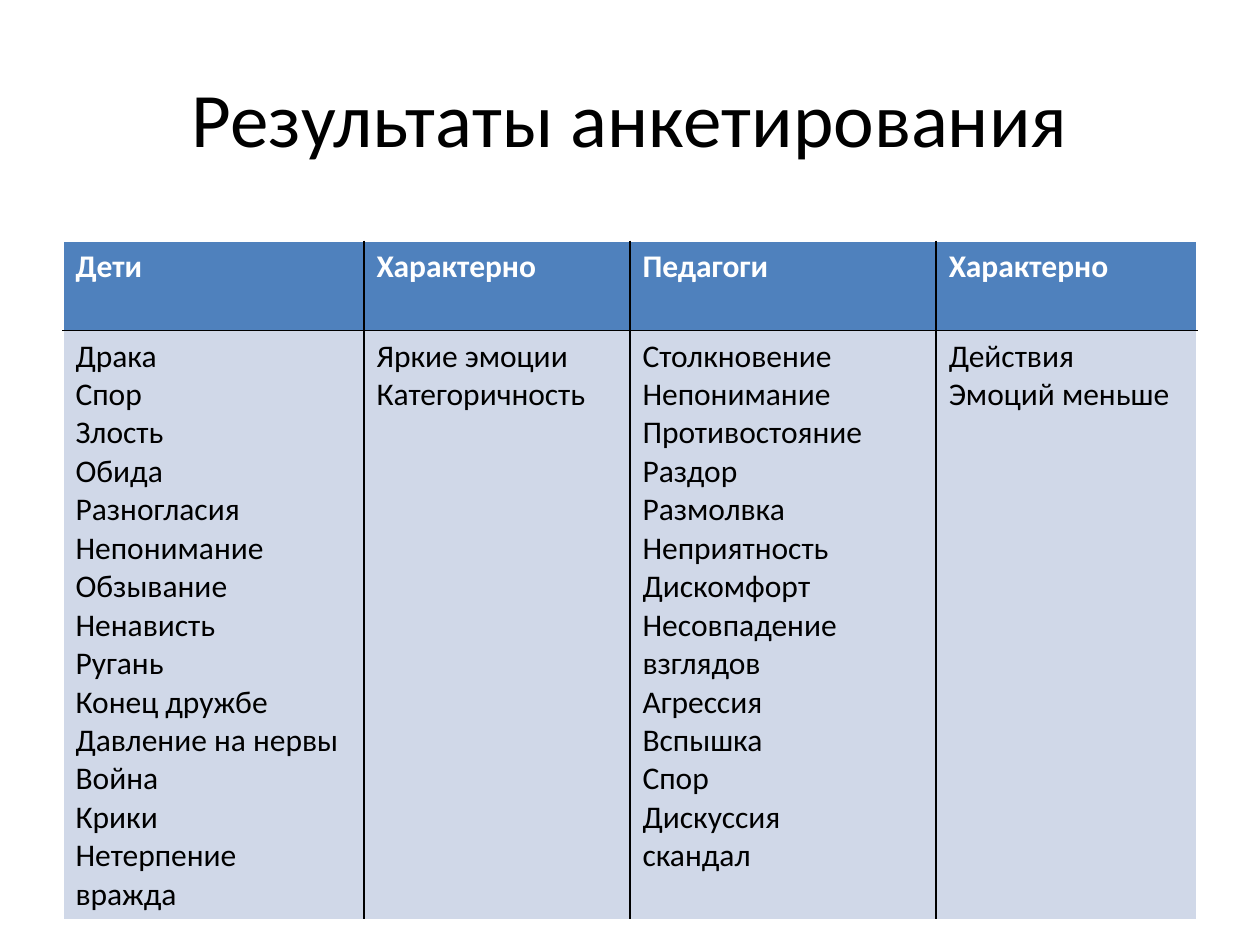
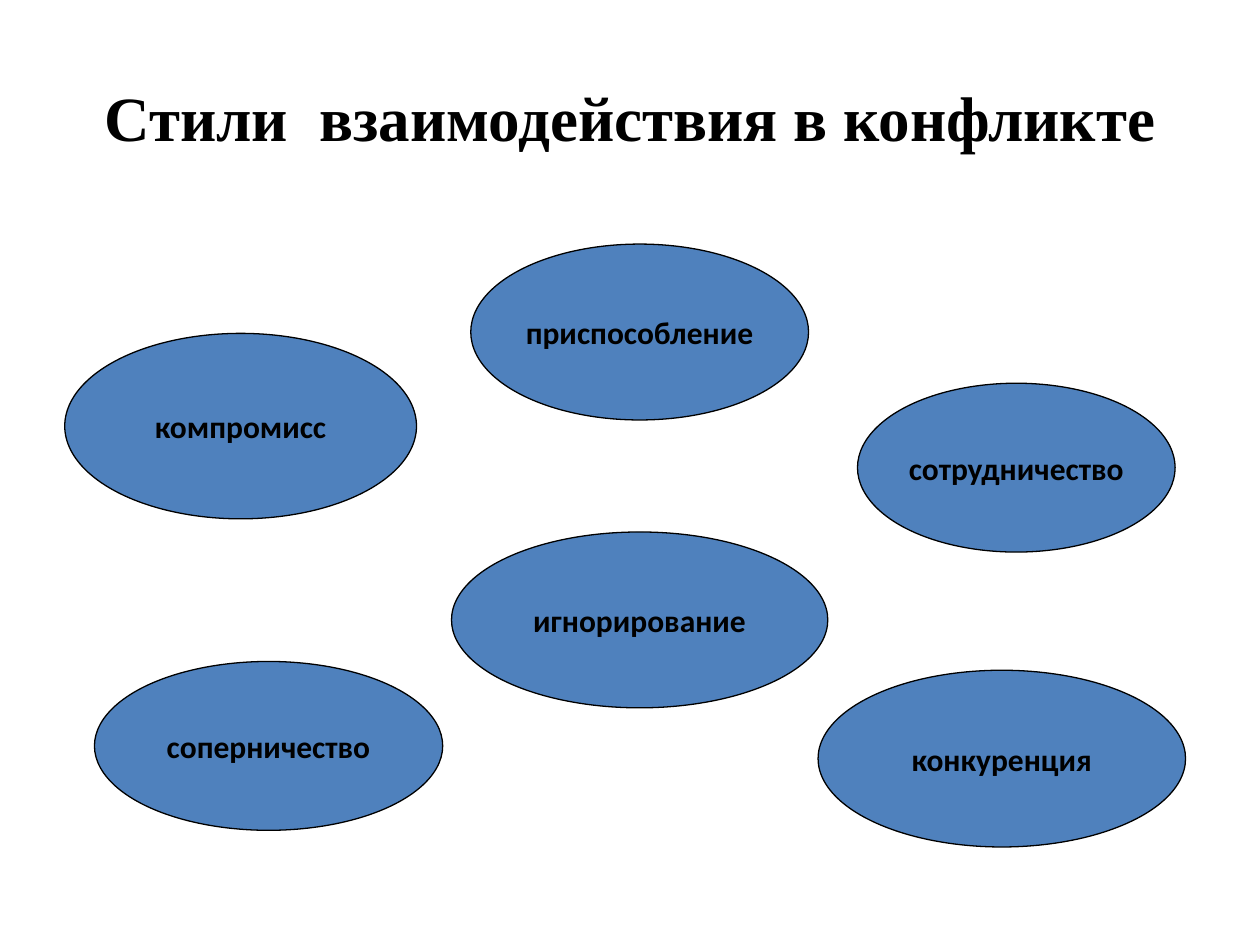
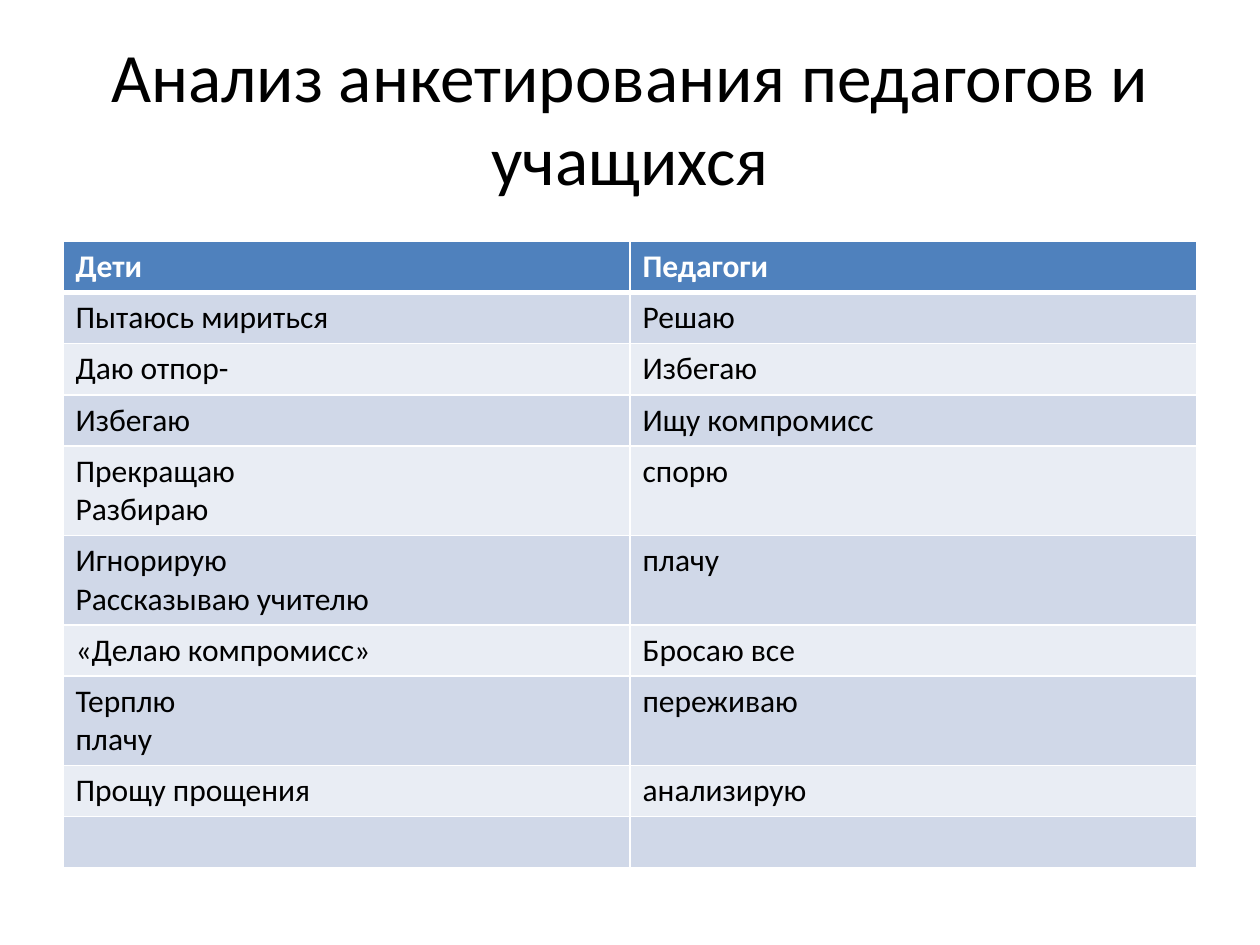
from lxml.etree import SubElement
from pptx import Presentation
from pptx.dml.color import RGBColor
from pptx.enum.shapes import MSO_SHAPE
from pptx.enum.text import MSO_ANCHOR, MSO_AUTO_SIZE, PP_ALIGN
from pptx.oxml.ns import qn
from pptx.util import Pt

COLORS = {"accent": "4F81BD", "band": "D0D8E8", "light": "E9EDF4",
          "white": "FFFFFF", "black": "000000"}
FONT = "Calibri"
TITLE_BOX = (36, 21.6, 648, 90)
TABLE_BOX = (36, 138, 648)  # left, top, width
ROW_HEIGHT = 29.2

SURVEY_HEADER = ["Дети", "Характерно", "Педагоги", "Характерно"]
SURVEY_WORDS = [
    ["Драка", "Спор", "Злость", "Обида", "Разногласия", "Непонимание",
     "Обзывание", "Ненависть", "Ругань", "Конец дружбе",
     "Давление на нервы", "Война", "Крики", "Нетерпение", "вражда"],
    ["Яркие эмоции", "Категоричность"],
    ["Столкновение", "Непонимание", "Противостояние", "Раздор",
     "Размолвка", "Неприятность", "Дискомфорт", "Несовпадение взглядов",
     "Агрессия", "Вспышка", "Спор", "Дискуссия", "скандал"],
    ["Действия", "Эмоций меньше"],
]
REACTIONS = [
    ("Дети", "Педагоги"),
    ("Пытаюсь мириться", "Решаю"),
    ("Даю отпор-", "Избегаю"),
    ("Избегаю", "Ищу компромисс"),
    ("Прекращаю\nРазбираю", "спорю"),
    ("Игнорирую\nРассказываю учителю", "плачу"),
    ("«Делаю компромисс»", "Бросаю все"),
    ("Терплю\nплачу", "переживаю"),
    ("Прощу прощения", "анализирую"),
    ("", ""),
]
# Offsets and sizes within the area below the title
STYLES_AREA = (36, 138)
STYLES = [
    ("компромисс", 1, 52.5, 201, 106),
    ("соперничество", 18, 240, 199, 96.5),
    ("приспособление", 233, 1.5, 193, 100.5),
    ("игнорирование", 222, 166, 215, 100.5),
    ("сотрудничество", 454, 81, 181.5, 96.5),
    ("конкуренция", 431.5, 245, 210, 101),
]


def rgb(name):
    return RGBColor.from_string(COLORS[name])


def set_font(p, size, color="black", bold=False, name=FONT):
    p.font.name = name
    p.font.size = Pt(size)
    p.font.bold = bold
    p.font.color.rgb = rgb(color)


def add_titled_slide(prs, text, size=44, name=FONT, bold=False):
    slide = prs.slides.add_slide(prs.slide_layouts[5])
    title = slide.shapes.title
    title.left, title.top, title.width, title.height = map(Pt, TITLE_BOX)
    tf = title.text_frame
    tf.text = text
    tf.auto_size = MSO_AUTO_SIZE.NONE
    tf.vertical_anchor = MSO_ANCHOR.MIDDLE
    p = tf.paragraphs[0]
    p.alignment = PP_ALIGN.CENTER
    set_font(p, size, name=name, bold=bold)
    return slide


def set_border(cell, side, color, width):
    ln = SubElement(cell._tc.get_or_add_tcPr(), qn(f"a:ln{side}"),
                    w=str(Pt(width)))
    fill = SubElement(ln, qn("a:solidFill"))
    SubElement(fill, qn("a:srgbClr"), val=COLORS[color])


def add_grid(slide, box, widths, heights, rows, grid_color, header_line):
    """Banded table: white outer edges, grid_color between the cells."""
    left, top, width = box
    n_rows, n_cols = len(rows), len(widths)
    table = slide.shapes.add_table(n_rows, n_cols, Pt(left), Pt(top),
                                   Pt(width), Pt(sum(heights))).table
    for column, w in zip(table.columns, widths):
        column.width = Pt(w)
    for r, (row, h) in enumerate(zip(rows, heights)):
        table.rows[r].height = Pt(h)
        for c, text in enumerate(row):
            cell = table.cell(r, c)
            cell.text = text
            for p in cell.text_frame.paragraphs:
                set_font(p, 18, "black" if r else "white", bold=r == 0)
            edges = {"L": c == 0, "R": c == n_cols - 1,
                     "T": r == 0, "B": r == n_rows - 1}
            for side, outer in edges.items():
                under_header = (r, side) in ((0, "B"), (1, "T"))
                set_border(cell, side, "white" if outer else grid_color,
                           header_line if under_header else 1)
            cell.fill.solid()
            band = "band" if r % 2 else "light"
            cell.fill.fore_color.rgb = rgb(band if r else "accent")


def add_style_ovals(slide, area):
    left, top = area
    for text, dx, dy, w, h in STYLES:
        sp = slide.shapes.add_shape(MSO_SHAPE.OVAL, Pt(left + dx),
                                    Pt(top + dy), Pt(w), Pt(h))
        sp.shadow.inherit = False
        sp.fill.solid()
        sp.fill.fore_color.rgb = rgb("accent")
        sp.line.color.rgb = rgb("black")
        sp.line.width = Pt(0.75)
        tf = sp.text_frame
        tf.text = text
        tf.word_wrap = False
        tf.vertical_anchor = MSO_ANCHOR.MIDDLE
        p = tf.paragraphs[0]
        p.alignment = PP_ALIGN.CENTER
        set_font(p, 18, bold=True)


def main():
    prs = Presentation()
    prs.slide_width, prs.slide_height = Pt(720), Pt(540)

    # Survey results
    slide = add_titled_slide(prs, "Результаты анкетирования")
    words = ["\n".join(column) for column in SURVEY_WORDS]
    add_grid(slide, TABLE_BOX, [172, 152, 175, 149], [51, 336.5],
             [SURVEY_HEADER, words], "black", 1)

    # Conflict styles
    slide = add_titled_slide(prs, "Стили  взаимодействия в конфликте", 36,
                             "Times New Roman", True)
    add_style_ovals(slide, STYLES_AREA)

    # Reactions of children and teachers
    slide = add_titled_slide(
        prs, "Анализ анкетирования педагогов и учащихся", 39.6)
    add_grid(slide, TABLE_BOX, [324, 324], [ROW_HEIGHT] * len(REACTIONS),
             REACTIONS, "white", 3)

    prs.save("out.pptx")


if __name__ == "__main__":
    main()
